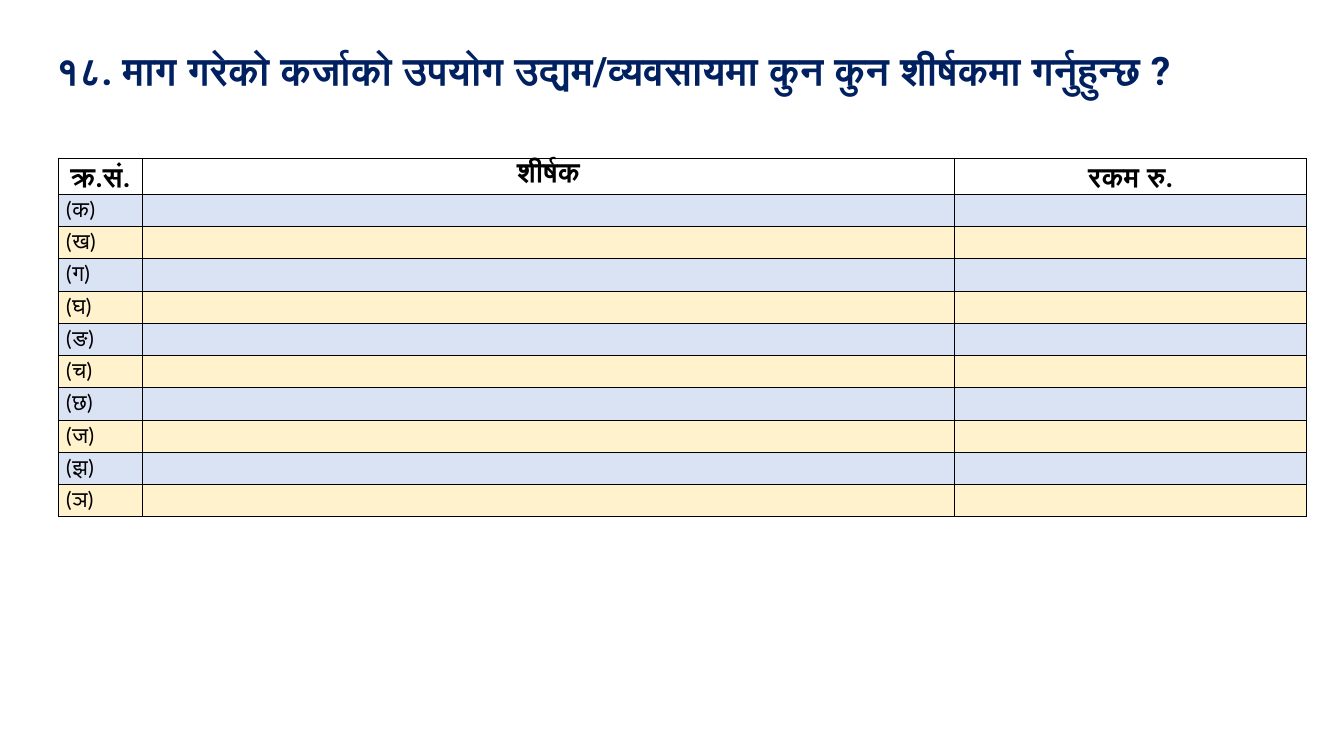
"""Build the slide that asks under which headings the requested loan will be used."""
from lxml.etree import SubElement
from pptx import Presentation
from pptx.dml.color import RGBColor
from pptx.enum.text import PP_ALIGN
from pptx.oxml.ns import qn
from pptx.util import Inches, Pt

TITLE = "१८. माग गरेको कर्जाको उपयोग उद्यम/व्यवसायमा कुन कुन शीर्षकमा गर्नुहुन्छ ?"
HEADINGS = ["क्र.सं.", "शीर्षक", "रकम रु."]
LETTERS = ["क", "ख", "ग", "घ", "ङ", "च", "छ", "ज", "झ", "ञ"]
COLUMN_WIDTHS = [0.83, 8.06, 3.49]
ROW_HEIGHT = 0.32
BAND_FILLS = ["DAE3F3", "FFF2CC"]
BLACK, NAVY = "000000", "002060"


def color(hex_value):
    return RGBColor.from_string(hex_value)


def format_text(paragraph, font_name, size, hex_value, bold):
    paragraph.line_spacing = 1.07
    for run in paragraph.runs:
        run.font.name = font_name
        run.font.size = Pt(size)
        run.font.bold = bold
        run.font.color.rgb = color(hex_value)


def add_borders(cell):
    properties = cell._tc.get_or_add_tcPr()
    for position, side in enumerate(("lnL", "lnR", "lnT", "lnB")):
        line = properties.makeelement(qn(f"a:{side}"), {"w": str(Pt(0.5))})
        fill = SubElement(line, qn("a:solidFill"))
        SubElement(fill, qn("a:srgbClr"), val=BLACK)
        properties.insert(position, line)


def fill_cell(cell, text, row):
    cell.margin_left = cell.margin_right = Inches(0.07)
    cell.margin_top = cell.margin_bottom = 0
    cell.text_frame.text = text
    paragraph = cell.text_frame.paragraphs[0]
    size = 16 if row else 20
    format_text(paragraph, "Calibri", size, BLACK, row == 0)
    if row:
        cell.fill.solid()
        cell.fill.fore_color.rgb = color(BAND_FILLS[(row - 1) % 2])
    else:
        paragraph.alignment = PP_ALIGN.CENTER
        cell.fill.background()
    if not text:
        paragraph._p.get_or_add_endParaRPr().set("sz", str(size * 100))
    add_borders(cell)


def add_title(slide):
    box = slide.shapes.add_textbox(Inches(0.46), Inches(0.38), Inches(12.25), Inches(1.1))
    box.text_frame.word_wrap = True
    box.text_frame.text = TITLE
    paragraph = box.text_frame.paragraphs[0]
    format_text(paragraph, "Roboto", 28, NAVY, True)
    properties = paragraph._p.get_or_add_pPr()
    properties.set("marL", str(Inches(0.5)))
    properties.set("indent", str(Inches(-0.5)))


def add_heading_table(slide):
    rows = [HEADINGS] + [[f"({letter})", "", ""] for letter in LETTERS]
    frame = slide.shapes.add_table(
        len(rows), len(HEADINGS), Inches(0.58), Inches(1.57),
        Inches(sum(COLUMN_WIDTHS)), Inches(ROW_HEIGHT * len(rows)))
    table = frame.table
    table.horz_banding = False
    for column, width in zip(table.columns, COLUMN_WIDTHS):
        column.width = Inches(width)
    for row, texts in enumerate(rows):
        table.rows[row].height = Inches(ROW_HEIGHT)
        for column, text in enumerate(texts):
            fill_cell(table.cell(row, column), text, row)


def main():
    presentation = Presentation()
    presentation.slide_width = Inches(13.33)
    presentation.slide_height = Inches(7.5)
    slide = presentation.slides.add_slide(presentation.slide_layouts[6])
    add_title(slide)
    add_heading_table(slide)
    presentation.save("out.pptx")


if __name__ == "__main__":
    main()
